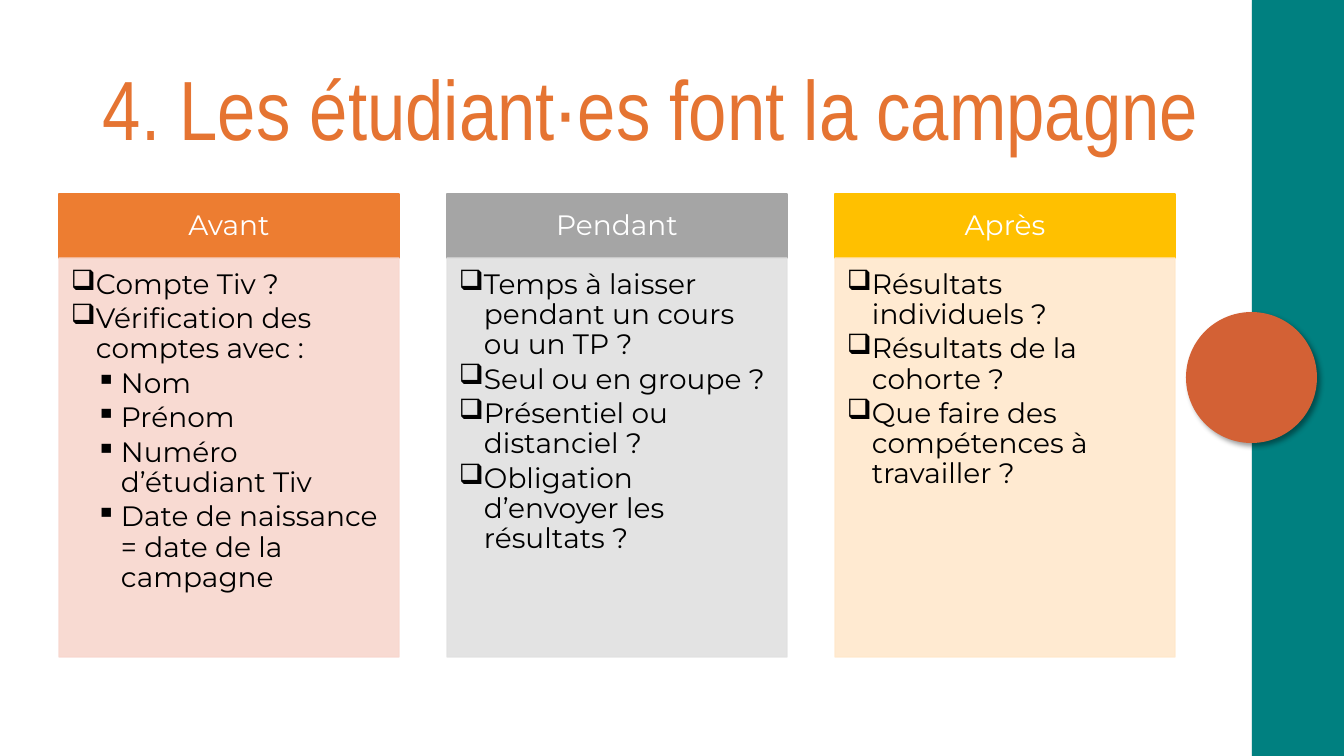
"""Build the slide on how students take the campaign."""
from lxml.etree import SubElement
from pptx import Presentation
from pptx.dml.color import RGBColor as RGB
from pptx.enum.shapes import MSO_SHAPE as Kind
from pptx.enum.text import MSO_ANCHOR as Anchor, PP_ALIGN as Align
from pptx.oxml.ns import qn
from pptx.util import Emu, Pt

WHITE = RGB(0xFF, 0xFF, 0xFF)
BLACK = RGB(0, 0, 0)
TEAL = RGB(0x00, 0x80, 0x80)
RUST = RGB(0xD3, 0x61, 0x35)
TITLE = RGB(0xE5, 0x74, 0x32)
ORANGE, PINK = RGB(0xED, 0x7D, 0x31), RGB(0xF8, 0xD7, 0xCE)
GREY, PALE = RGB(0xA5, 0xA5, 0xA5), RGB(0xE1, 0xE1, 0xE1)
GOLD, CREAM = RGB(0xFF, 0xC0, 0x00), RGB(0xFF, 0xE8, 0xCC)

HEADING = "4. Les étudiant·es font la campagne"
COLUMNS = [
    ("Avant", ORANGE, PINK, [
        (0, "Compte Tiv ?"),
        (0, "Vérification des comptes avec :"),
        (1, "Nom"),
        (1, "Prénom"),
        (1, "Numéro d’étudiant Tiv"),
        (1, "Date de naissance = date de la campagne"),
    ]),
    ("Pendant", GREY, PALE, [
        (0, "Temps à laisser pendant un cours ou un TP ?"),
        (0, "Seul ou en groupe ?"),
        (0, "Présentiel ou distanciel ?"),
        (0, "Obligation d’envoyer les résultats ?"),
    ]),
    ("Après", GOLD, CREAM, [
        (0, "Résultats individuels ?"),
        (0, "Résultats de la cohorte ?"),
        (0, "Que faire des compétences à travailler ?"),
    ]),
]
BULLETS = "❑▪"
LEFT, PITCH, WIDTH = 59, 388, 340
TOP, HEAD, BODY = 194, 64, 399
INDENT = 25


def px(n):
    return Emu(round(n * 914400 / 100.8))


def add_block(slide, kind, box, color, edge=False):
    shape = slide.shapes.add_shape(kind, *map(px, box))
    shape.shadow.inherit = False
    shape.fill.solid()
    shape.fill.fore_color.rgb = color
    if edge:
        shape.line.color.rgb = color
        shape.line.width = Pt(1)
    else:
        shape.line.fill.background()
    return shape


def add_shadow(shape):
    effects = shape.element.spPr.find(qn("a:effectLst"))
    outer = SubElement(effects, qn("a:outerShdw"), blurRad=str(Pt(4)),
                       dist=str(Pt(3)), dir="2700000", algn="tl", rotWithShape="0")
    tint = SubElement(outer, qn("a:srgbClr"), val=str(BLACK))
    SubElement(tint, qn("a:alpha"), val="40000")


def fade(shape):
    for tint in shape.element.spPr.iter(qn("a:srgbClr")):
        SubElement(tint, qn("a:alpha"), val="90000")


def set_frame(shape, anchor, insets):
    frame = shape.text_frame
    frame.word_wrap = True
    frame.vertical_anchor = anchor
    (frame.margin_left, frame.margin_top,
     frame.margin_right, frame.margin_bottom) = map(px, insets)
    return frame


def set_text(par, text, size, face, color, align=Align.LEFT):
    par.text = text
    par.alignment = align
    par.line_spacing = 0.9
    par.font.size = Pt(size)
    par.font.name = face
    par.font.color.rgb = color


def add_bullet(par, level):
    par.level = level
    props = par._p.get_or_add_pPr()
    props.set("marL", str(px(INDENT * (level + 1))))
    props.set("indent", str(px(-INDENT)))
    SubElement(props, qn("a:buChar"), char=BULLETS[level])


def add_column(slide, left, name, dark, light, items):
    head = add_block(slide, Kind.RECTANGLE, (left, TOP, WIDTH, HEAD), dark, True)
    frame = set_frame(head, Anchor.MIDDLE, (16, 9, 16, 9))
    set_text(frame.paragraphs[0], name, 20, "Montserrat", WHITE, Align.CENTER)

    body = add_block(slide, Kind.RECTANGLE, (left, TOP + HEAD, WIDTH, BODY), light, True)
    fade(body)
    frame = set_frame(body, Anchor.TOP, (12, 12, 16, 17))
    for i, (level, text) in enumerate(items):
        par = frame.add_paragraph() if i else frame.paragraphs[0]
        add_bullet(par, level)
        set_text(par, text, 20, "Montserrat", BLACK)
        par.space_after = Pt(3)


def main():
    deck = Presentation()
    deck.slide_width, deck.slide_height = px(1344), px(756)
    slide = deck.slides.add_slide(deck.slide_layouts[6])

    add_shadow(add_block(slide, Kind.RECTANGLE, (1252, 0, 92, 756), TEAL))
    add_shadow(add_block(slide, Kind.FLOWCHART_CONNECTOR, (1186, 312, 131, 131), RUST))

    title = slide.shapes.add_textbox(*map(px, (93, 40, 1159, 146)))
    frame = set_frame(title, Anchor.MIDDLE, (10, 5, 10, 5))
    set_text(frame.paragraphs[0], HEADING, 60, "Arial Narrow", TITLE)

    for i, column in enumerate(COLUMNS):
        add_column(slide, LEFT + i * PITCH, *column)
    deck.save("out.pptx")


if __name__ == "__main__":
    main()
